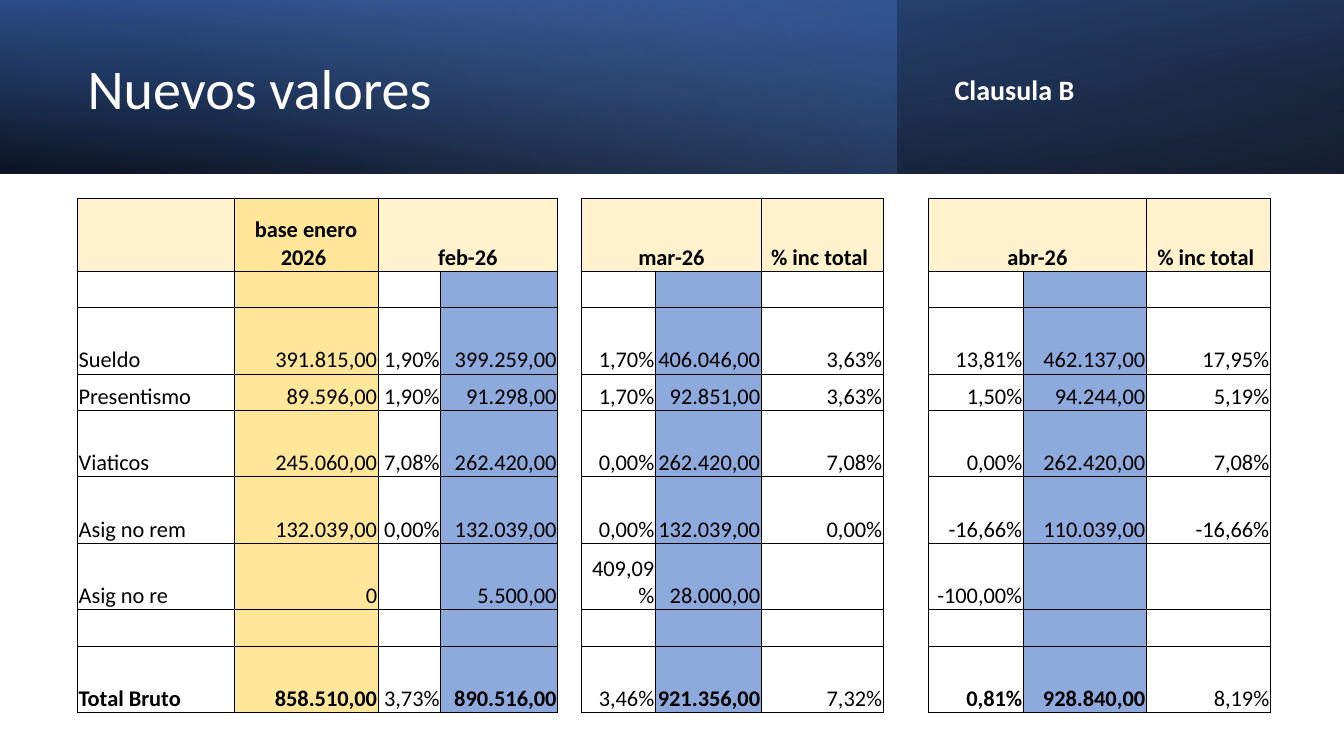
"""Build the "Nuevos valores" slide: a gradient banner over a salary table."""
from lxml import etree
from pptx import Presentation
from pptx.dml.color import RGBColor
from pptx.enum.shapes import MSO_SHAPE
from pptx.enum.text import MSO_ANCHOR, PP_ALIGN
from pptx.oxml import parse_xml
from pptx.util import Pt

PX = 9144
RECTANGLE = MSO_SHAPE.RECTANGLE
MIDDLE, BOTTOM = MSO_ANCHOR.MIDDLE, MSO_ANCHOR.BOTTOM
LEFT, CENTER, RIGHT = PP_ALIGN.LEFT, PP_ALIGN.CENTER, PP_ALIGN.RIGHT
WHITE = RGBColor(0xFF, 0xFF, 0xFF)
BLACK = RGBColor(0x00, 0x00, 0x00)
NAVY = RGBColor(0x2F, 0x55, 0x97)
BLUE = RGBColor(0x44, 0x72, 0xC4)
PALE_BLUE = RGBColor(0x8F, 0xAA, 0xDC)
CREAM = RGBColor(0xFF, 0xF2, 0xCC)
GOLD = RGBColor(0xFF, 0xE6, 0x99)
AMOUNT_BLUE = RGBColor(0x8E, 0xA9, 0xDB)
NAMESPACE = "http://schemas.openxmlformats.org/drawingml/2006/main"
NO_STYLE = "{2D5ABB26-0587-4C30-8999-92F81FD0307C}"


def add_text(paragraph, text, **font_values):
    run = paragraph.add_run()
    run.text = text
    run.font.color.rgb = font_values.pop("color")
    for name, value in {"name": "Calibri", **font_values}.items():
        setattr(run.font, name, value)


def add_border(cell, side, width):
    properties = cell._tc.get_or_add_tcPr()
    properties.append(parse_xml(
        f'<a:ln{side} xmlns:a="{NAMESPACE}" w="{Pt(width)}"><a:solidFill>'
        f'<a:srgbClr val="{BLACK}"/></a:solidFill></a:ln{side}>'))


presentation = Presentation()
presentation.slide_width = 1333 * PX
presentation.slide_height = 750 * PX
slide = presentation.slides.add_slide(presentation.slide_layouts[6])

banner_layers = [
    (1333, 180, True, 100, [(0, BLACK, 96), (100, NAVY, 100)]),
    (889, 0, False, 140, [(0, BLUE, 41), (74, PALE_BLUE, 0)]),
    (1333, 0, True, 260, [(0, BLACK, 63), (78, BLUE, 15)]),
]
for width, rotation, flipped, angle, stops in banner_layers:
    shape = slide.shapes.add_shape(RECTANGLE, 0, 0, width * PX, 172 * PX)
    shape.shadow.inherit = False
    shape.line.fill.background()
    shape.rotation = rotation
    if flipped:
        shape._element.spPr.xfrm.set("flipH", "1")
    stop_xml = "".join(
        f'<a:gs pos="{position * 1000}"><a:srgbClr val="{color}">'
        f'<a:alpha val="{alpha * 1000}"/></a:srgbClr></a:gs>'
        for position, color, alpha in stops)
    shape._element.spPr.find(f"{{{NAMESPACE}}}prstGeom").addnext(parse_xml(
        f'<a:gradFill xmlns:a="{NAMESPACE}" rotWithShape="1"><a:gsLst>{stop_xml}</a:gsLst>'
        f'<a:lin ang="{angle * 60000}" scaled="0"/></a:gradFill>'))

headings = [
    ("Nuevos valores", (77, 27, 772, 127), 40, False),
    ("Clausula B", (937, 43, 354, 96), 20, True),
]
for text, box, size, bold in headings:
    text_frame = slide.shapes.add_textbox(*(length * PX for length in box)).text_frame
    text_frame.word_wrap = True
    text_frame.vertical_anchor = MIDDLE
    paragraph = text_frame.paragraphs[0]
    paragraph.line_spacing = 0.9
    add_text(paragraph, text, size=Pt(size), bold=bold, color=WHITE)

column_widths = [155, 143, 62, 116, 24, 73, 105, 121, 45, 94, 122, 123]
row_heights = [72, 36, 66, 36, 66, 66, 66, 36, 66]
values = [
    ["", "base enero 2026 ", "feb-26", "", "", "mar-26", "", "% inc total ",
     "", "abr-26", "", "% inc total "],
    [""] * 12,
    ["Sueldo", "391.815,00", "1,90%", "399.259,00", "", "1,70%", "406.046,00", "3,63%",
     "", "13,81%", "462.137,00", "17,95%"],
    ["Presentismo", "89.596,00", "1,90%", "91.298,00", "", "1,70%", "92.851,00", "3,63%",
     "", "1,50%", "94.244,00", "5,19%"],
    ["Viaticos", "245.060,00", "7,08%", "262.420,00", "", "0,00%", "262.420,00", "7,08%",
     "", "0,00%", "262.420,00", "7,08%"],
    ["Asig no rem", "132.039,00", "0,00%", "132.039,00", "", "0,00%", "132.039,00", "0,00%",
     "", "-16,66%", "110.039,00", "-16,66%"],
    ["Asig no re", "0", "", "5.500,00", "", "409,09%", "28.000,00", "",
     "", "-100,00%", "", ""],
    [""] * 12,
    ["Total Bruto", "858.510,00", "3,73%", "890.516,00", "", "3,46%", "921.356,00", "7,32%",
     "", "0,81%", "928.840,00", "8,19%"],
]
BASE_COLUMN, FEBRUARY_AMOUNT = 1, 3
AMOUNT_COLUMNS = (3, 6, 10)
GAP_COLUMNS = (4, 8)
BOLD_TOTALS = (0, 1, 3, 6, 9, 10)
last_row = len(values) - 1

frame = slide.shapes.add_table(
    len(values), len(column_widths), 77 * PX, 197 * PX,
    sum(column_widths) * PX, sum(row_heights) * PX)
table = frame.table
table.first_row = table.horz_banding = False
table._tbl.tblPr.find(f"{{{NAMESPACE}}}tableStyleId").text = NO_STYLE
for column, width in zip(table.columns, column_widths):
    column.width = width * PX
for row, height in zip(table.rows, row_heights):
    row.height = height * PX

for row_index, row_values in enumerate(values):
    is_header = row_index == 0
    for column_index, text in enumerate(row_values):
        cell = table.cell(row_index, column_index)
        cell.margin_left = cell.margin_right = cell.margin_top = PX
        cell.margin_bottom = 0
        cell.vertical_anchor = BOTTOM

        sides = "LRTB"
        if column_index in GAP_COLUMNS:
            sides = "LR"
            if column_index == 4 and not is_header:
                sides = "R"
        elif column_index == FEBRUARY_AMOUNT and not is_header:
            sides = "LTB"
        for side in sides:
            thick = (side == "L" and column_index == 0) or (
                side == "B" and row_index == last_row and column_index in (0, 9))
            add_border(cell, side, 1 if thick else 0.5)

        fill_color = None
        if column_index == BASE_COLUMN:
            fill_color = GOLD
        elif is_header and column_index not in GAP_COLUMNS:
            fill_color = CREAM
        elif column_index in AMOUNT_COLUMNS:
            fill_color = AMOUNT_BLUE
        if fill_color is None:
            cell.fill.background()
        else:
            cell.fill.solid()
            cell.fill.fore_color.rgb = fill_color

        if text:
            paragraph = cell.text_frame.paragraphs[0]
            paragraph.alignment = CENTER if is_header else RIGHT if column_index else LEFT
            bold = is_header or (row_index == last_row and column_index in BOLD_TOTALS)
            add_text(paragraph, text, size=Pt(16), bold=bold, color=BLACK)

for month_column in (2, 5, 9):
    table.cell(0, month_column).merge(table.cell(0, month_column + 1))

etree.cleanup_namespaces(table._tbl)
presentation.save("out.pptx")
